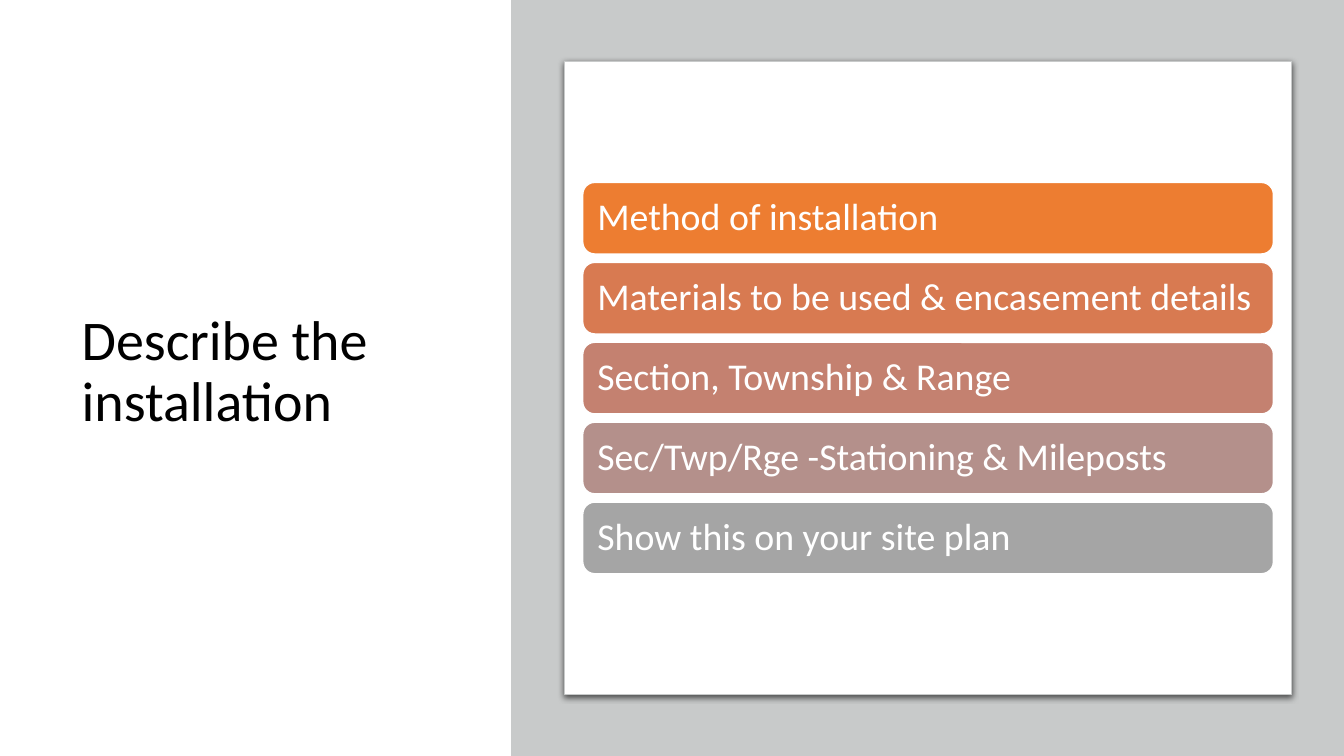
from lxml import etree
from pptx import Presentation
from pptx.dml.color import RGBColor
from pptx.enum import shapes, text
from pptx.oxml import ns
from pptx.util import Inches, Pt

WHITE = RGBColor(0xFF, 0xFF, 0xFF)
BLACK = RGBColor(0, 0, 0)
GREY = RGBColor(0xC8, 0xCA, 0xCA)
STEPS = [
    ("Method of installation", RGBColor(0xED, 0x7D, 0x31)),
    ("Materials to be used & encasement details", RGBColor(0xD8, 0x7A, 0x51)),
    ("Section, Township & Range", RGBColor(0xC4, 0x81, 0x70)),
    ("Sec/Twp/Rge -Stationing & Mileposts", RGBColor(0xB4, 0x90, 0x8B)),
    ("Show this on your site plan", RGBColor(0xA5, 0xA5, 0xA5)),
]
TOP, PITCH = 1.81, 0.793


def write(shape, words, size, color, inset=0.1, pad=0.05):
    frame = shape.text_frame
    frame.word_wrap = True
    frame.auto_size = text.MSO_AUTO_SIZE.NONE
    frame.vertical_anchor = text.MSO_ANCHOR.MIDDLE
    frame.margin_left = frame.margin_right = Inches(inset)
    frame.margin_top = frame.margin_bottom = Inches(pad)
    para = frame.paragraphs[0]
    para.alignment = text.PP_ALIGN.LEFT
    para.line_spacing = 0.9
    para.space_before = Pt(0)
    run = para.add_run()
    run.text = words
    run.font.name = "Calibri"
    run.font.size = Pt(size)
    run.font.color.rgb = color


def box(slide, kind, area, fill, line=None, width=1):
    shape = slide.shapes.add_shape(kind, *map(Inches, area))
    shape.shadow.inherit = False
    shape.fill.solid()
    shape.fill.fore_color.rgb = fill
    if line is None:
        shape.line.fill.background()
    else:
        shape.line.color.rgb = line
        shape.line.width = Pt(width)
    return shape


def shade(shape, blur, dist, alpha):
    effects = shape.element.spPr.find(ns.qn("a:effectLst"))
    outer = etree.SubElement(
        effects, ns.qn("a:outerShdw"), blurRad=str(Pt(blur)),
        dist=str(Pt(dist)), dir="5400000", algn="t", rotWithShape="0")
    color = etree.SubElement(outer, ns.qn("a:srgbClr"), val=str(BLACK))
    etree.SubElement(color, ns.qn("a:alpha"), val=str(alpha * 1000))


def head(slide, words):
    title = slide.shapes.title
    title.left, title.top = Inches(0.71), Inches(0.69)
    title.width, title.height = Inches(4.01), Inches(6.02)
    write(title, words, 40, BLACK)


def main():
    deck = Presentation()
    deck.slide_width, deck.slide_height = Inches(13.33), Inches(7.5)
    slide = deck.slides.add_slide(deck.slide_layouts[5])
    kind = shapes.MSO_SHAPE
    head(slide, "Describe the installation")
    box(slide, kind.RECTANGLE, (5.07, 0, 8.26, 7.5), GREY)
    card = box(slide, kind.ROUNDED_RECTANGLE, (5.6, 0.61, 7.21, 6.28),
               WHITE, GREY, 0.75)
    card.adjustments[0] = 0
    shade(card, 4.5, 1.5, 63)
    for i, (words, fill) in enumerate(STEPS):
        bar = box(slide, kind.ROUNDED_RECTANGLE,
                  (5.78, TOP + i * PITCH, 6.85, 0.71), fill, WHITE)
        write(bar, words, 27, WHITE, inset=0.11, pad=0.11)
    deck.save("out.pptx")


if __name__ == "__main__":
    main()
